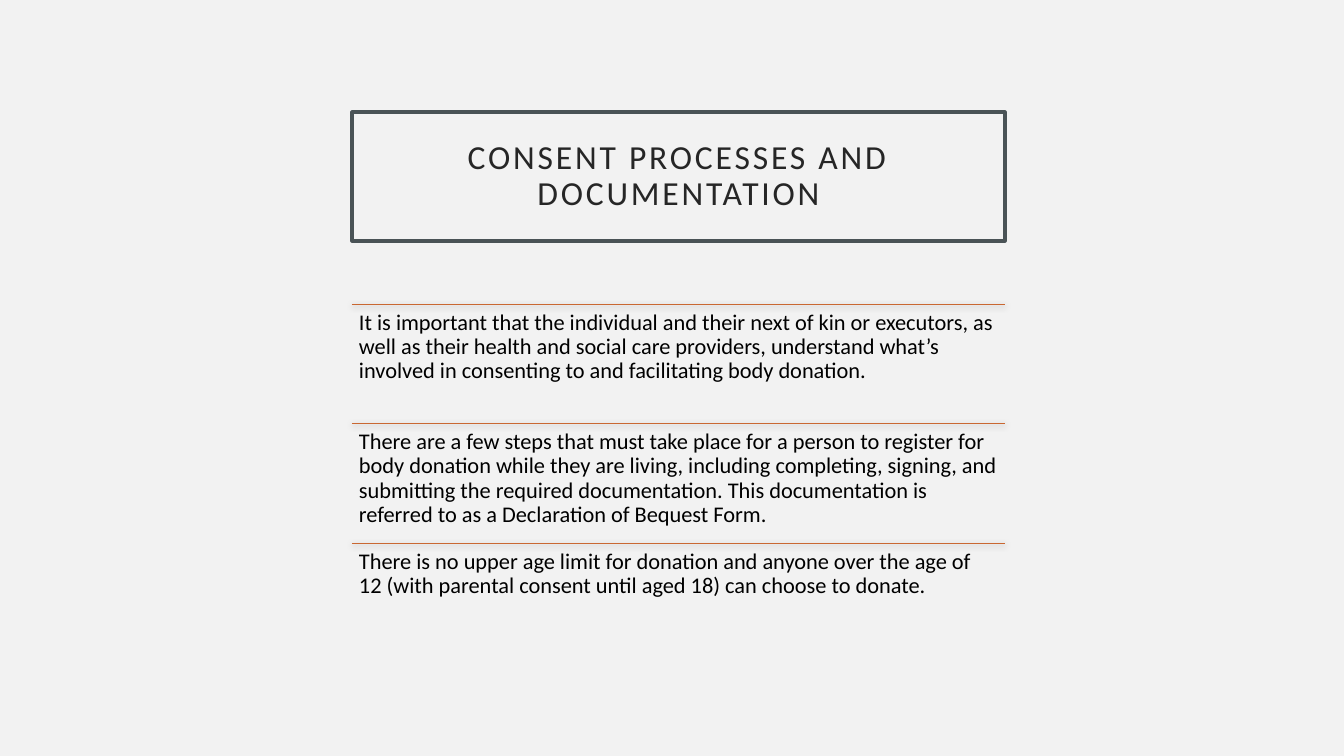
from lxml import etree
from pptx import Presentation
from pptx.dml.color import RGBColor
from pptx.enum.shapes import MSO_CONNECTOR as CONN
from pptx.enum.text import MSO_ANCHOR as ANCHOR, MSO_AUTO_SIZE as AUTOSIZE, PP_ALIGN as ALIGN
from pptx.oxml import parse_xml
from pptx.util import Pt

PX = 914400 / 100.8
COLORS = {"bg": "F2F2F2", "frame": "4A5356", "title": "262626",
          "rule": "C96731", "text": "000000", "shadow": "000000"}
A_NS = "http://schemas.openxmlformats.org/drawingml/2006/main"
SHADOW = f"""<a:effectLst xmlns:a="{A_NS}">
  <a:outerShdw blurRad="{Pt(4.4)}" dist="{Pt(1.2)}" dir="5400000" algn="ctr" rotWithShape="0">
    <a:srgbClr val="{COLORS['shadow']}"><a:alpha val="45000"/></a:srgbClr>
  </a:outerShdw>
</a:effectLst>"""


def px(*lengths):
    return [round(n * PX) for n in lengths]


def write(sp, text, *, size, color, inset, align=ALIGN.LEFT, anchor=ANCHOR.TOP,
          after=0, spacing=0):
    tf = sp.text_frame
    tf.word_wrap = True
    tf.auto_size = AUTOSIZE.NONE
    tf.vertical_anchor = anchor
    tf.margin_left, tf.margin_top, tf.margin_right, tf.margin_bottom = px(*[inset] * 4)
    p = tf.paragraphs[0]
    p.alignment = align
    p.line_spacing = 0.9
    p.space_before = Pt(0)
    p.space_after = Pt(after)
    r = p.add_run()
    r.text = text
    r.font.name = "Calibri"
    r.font.size = Pt(size)
    r.font.color.rgb = RGBColor.from_string(COLORS[color])
    if spacing:
        r.font._element.set("spc", str(spacing * 100))


prs = Presentation()
prs.slide_width, prs.slide_height = px(1344, 756)
s = prs.slides.add_slide(prs.slide_layouts[5])
s.background.fill.solid()
s.background.fill.fore_color.rgb = RGBColor.from_string(COLORS["bg"])

LEFT, WIDTH = 352, 653

# Framed title
title = s.shapes.title
title.left, title.top, title.width, title.height = px(LEFT, 112, WIDTH, 129)
title.line.color.rgb = RGBColor.from_string(COLORS["frame"])
title.line.width = Pt(2.25)
write(title, "CONSENT PROCESSES AND DOCUMENTATION", size=24, color="title",
      inset=20, align=ALIGN.CENTER, anchor=ANCHOR.MIDDLE, after=6, spacing=2)

# Ruled statements, evenly spaced
STATEMENTS = [
    "It is important that the individual and their next of kin or executors, as well as "
    "their health and social care providers, understand what’s involved in consenting to "
    "and facilitating body donation.",
    "There are a few steps that must take place for a person to register for body donation "
    "while they are living, including completing, signing, and submitting the required "
    "documentation. This documentation is referred to as a Declaration of Bequest Form.",
    "There is no upper age limit for donation and anyone over the age of 12 (with parental "
    "consent until aged 18) can choose to donate.",
]
FIRST, LAST = 304, 543
step = (LAST - FIRST) / (len(STATEMENTS) - 1)

for i, statement in enumerate(STATEMENTS):
    top = FIRST + i * step
    rule = s.shapes.add_connector(CONN.STRAIGHT, *px(LEFT, top, LEFT + WIDTH, top))
    rule.line.color.rgb = RGBColor.from_string(COLORS["rule"])
    rule.line.width = Pt(0.5)
    rule._element.spPr.append(parse_xml(SHADOW))
    box = s.shapes.add_textbox(*px(LEFT, top, WIDTH, step))
    write(box, statement, size=16, color="text", inset=7)

prs.save("out.pptx")
